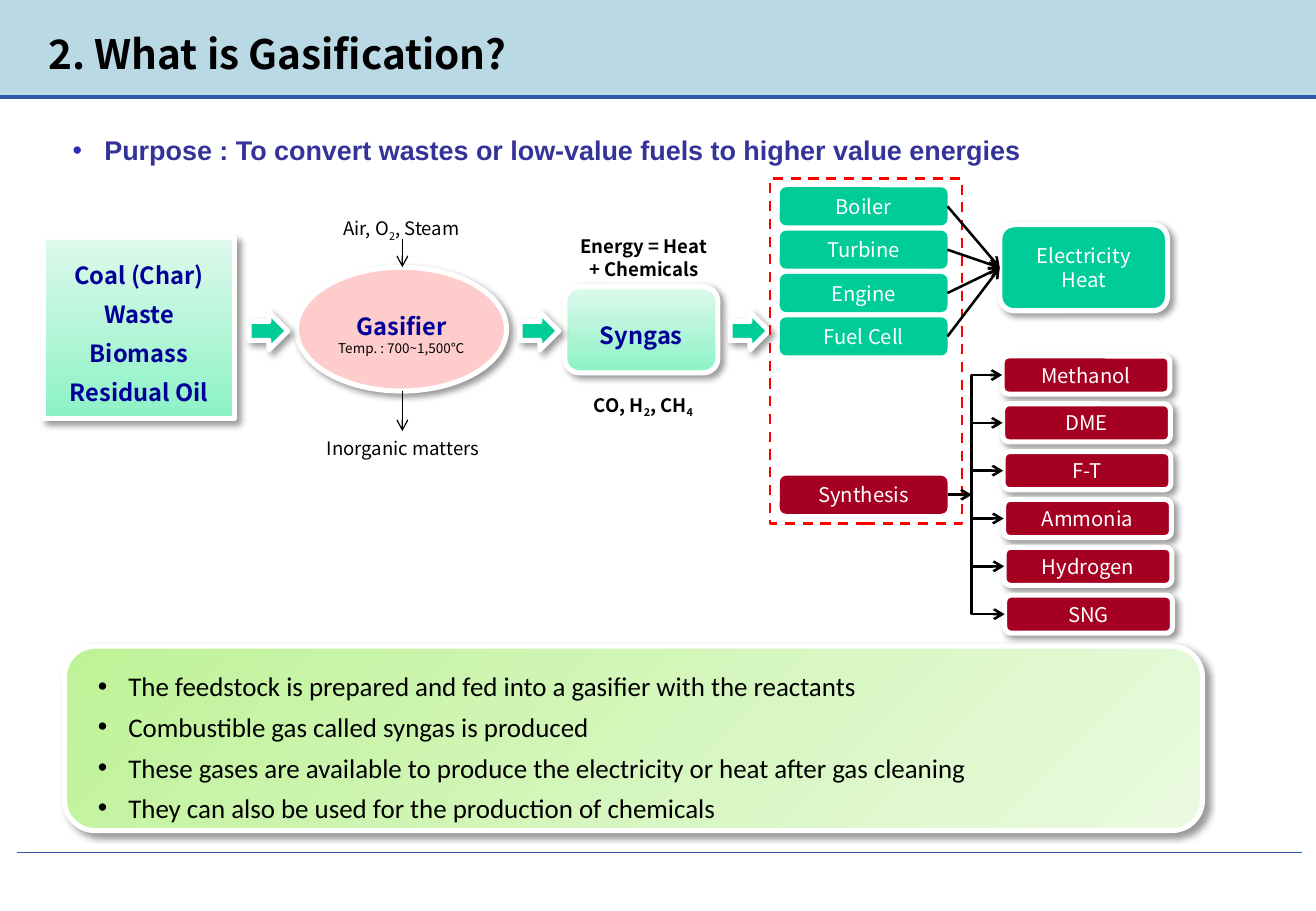
from lxml.etree import SubElement
from pptx import Presentation
from pptx.dml.color import RGBColor
from pptx.enum.dml import MSO_LINE
from pptx.enum.shapes import MSO_CONNECTOR as CONN, MSO_SHAPE as SHAPE
from pptx.enum.text import MSO_ANCHOR as ANCHOR, PP_ALIGN as ALIGN
from pptx.oxml.ns import qn
from pptx.util import Pt

NOTO = "Noto Sans CJK KR"
GREEN, RED, NAVY, WHITE, BLACK, BLUE = "00CC99", "A50021", "000099", "FFFFFF", "000000", "2C5AA7"
MINT = ("8CF2C6", "DEF9EC", 90)
LIME = ("BEF297", "EAFAE0", 315)

# Text formats
TITLE = dict(name=NOTO, size=Pt(24), bold=True, color=BLACK)
STAGE = dict(name=NOTO, size=Pt(14), bold=True, color=NAVY)
DETAIL = dict(name=NOTO, size=Pt(8), color=BLACK)
BOX = dict(name=NOTO, size=Pt(12), color=WHITE)
LABEL = dict(name=NOTO, size=Pt(11), color=BLACK)
STRONG = dict(LABEL, bold=True)
PURPOSE = dict(name="Arial", size=Pt(16), bold=True, color="333399")
NOTE = dict(name="Calibri", size=Pt(16), color=BLACK)


def rgb(code):
    return RGBColor.from_string(code)


def pts(*values):
    return [Pt(v) for v in values]


def write(sp, lines, fmt, align=ALIGN.CENTER, spacing=None, bullet=None, indent=18,
          inset=None, anchor=ANCHOR.TOP, wrap=True):
    """Fill a shape with paragraphs; text between bars is subscript."""
    tf = sp.text_frame
    tf.word_wrap, tf.vertical_anchor = wrap, anchor
    if inset:
        tf.margin_left, tf.margin_top, tf.margin_right, tf.margin_bottom = pts(*inset)
    for i, line in enumerate(lines):
        p = tf.paragraphs[0] if i == 0 else tf.add_paragraph()
        add_paragraph_text(p, line, fmt, align, spacing)
        if bullet:
            pPr = p._p.get_or_add_pPr()
            pPr.set("marL", str(Pt(indent)))
            pPr.set("indent", str(-Pt(indent)))
            SubElement(SubElement(pPr, qn("a:buClr")), qn("a:srgbClr"), val=bullet)
            SubElement(pPr, qn("a:buFont"), typeface="Arial")
            SubElement(pPr, qn("a:buChar"), char="•")


def add_paragraph_text(p, line, fmt, align=ALIGN.CENTER, spacing=None):
    p.alignment, p.line_spacing = align, spacing
    for i, part in enumerate(line.split("|")):
        r = p.add_run()
        r.text = part
        for key, value in fmt.items():
            if key == "color":
                r.font.color.rgb = rgb(value)
            else:
                setattr(r.font, key, value)
        rPr = r._r.get_or_add_rPr()
        SubElement(rPr, qn("a:ea"), typeface=fmt["name"])
        if i % 2:
            rPr.set("baseline", "-25000")


def add_text(s, box, lines, fmt, **options):
    write(s.shapes.add_textbox(*pts(*box)), lines, fmt, **options)


def add_box(s, kind, box, fill=None, raised=False):
    """Shape with a flat, gradient or no fill; raised adds white edge and shadow."""
    sp = s.shapes.add_shape(kind, *pts(*box))
    sp.shadow.inherit = False
    if isinstance(fill, tuple):
        sp.fill.gradient()
        sp.fill.gradient_angle = fill[2]
        for stop, code in zip(sp.fill.gradient_stops, fill):
            stop.color.rgb = rgb(code)
    elif fill:
        sp.fill.solid()
        sp.fill.fore_color.rgb = rgb(fill)
    else:
        sp.fill.background()
    if raised:
        sp.line.color.rgb, sp.line.width = rgb(WHITE), Pt(3)
        effects = sp._element.spPr.find(qn("a:effectLst"))
        shadow = SubElement(effects, qn("a:outerShdw"), blurRad=str(Pt(4)), dist=str(Pt(3)),
                            dir="2700000", algn="tl", rotWithShape="0")
        color = SubElement(shadow, qn("a:srgbClr"), val=BLACK)
        SubElement(color, qn("a:alpha"), val="40000")
    else:
        sp.line.fill.background()
    return sp


def add_label_box(s, box, lines, fill, fmt=BOX, raised=False, spacing=None):
    sp = add_box(s, SHAPE.ROUNDED_RECTANGLE, box, fill, raised)
    write(sp, lines, fmt, spacing=spacing, inset=(0, 0, 0, 0), anchor=ANCHOR.MIDDLE)
    return sp


def add_line(s, ends, color=BLACK, width=1.5, heads=("tailEnd",), begin=None, end=None,
             kind=CONN.STRAIGHT):
    """Connector; begin and end are optional (shape, side) joins."""
    cx = s.shapes.add_connector(kind, *pts(*ends))
    if begin:
        cx.begin_connect(*begin)
    if end:
        cx.end_connect(*end)
    cx.line.color.rgb, cx.line.width = rgb(color), Pt(width)
    ln = cx.line._get_or_add_ln()
    for head in heads:
        SubElement(ln, qn("a:" + head), type="arrow")
    SubElement(cx._element.spPr, qn("a:effectLst"))
    return cx


def add_frame(s):
    band = add_box(s, SHAPE.RECTANGLE, (0, 0, 780, 57), "52A4BE")
    color = band._element.spPr.find(qn("a:solidFill"))[0]
    SubElement(color, qn("a:alpha"), val="40000")
    add_line(s, (10, 505.5, 772, 505.5), BLUE, 0.75, ())
    add_line(s, (0, 57.6, 780, 57.6), BLUE, 2.25, ())
    add_text(s, (21.6, 13.7, 564, 36), ["2. What is Gasification?"], TITLE, align=ALIGN.LEFT)
    add_text(s, (36, 66.2, 699, 34),
             ["Purpose : To convert wastes or low-value fuels to higher value energies"], PURPOSE,
             align=ALIGN.LEFT, spacing=1.5, bullet="2D2DB9", indent=18.8, inset=(7.2, 3.6, 0, 3.6))


def add_process(s):
    # Feedstock, gasifier and syngas
    feed = add_box(s, SHAPE.RECTANGLE, (26, 141, 113, 107.3), MINT, True)
    write(feed, ["Coal (Char)", "Waste", "Biomass", "Residual Oil"], STAGE, spacing=Pt(23),
          anchor=ANCHOR.MIDDLE)
    gasifier = add_box(s, SHAPE.OVAL, (175.7, 158.4, 124.6, 73.4), "FFCCCC", True)
    write(gasifier, ["Gasifier"], STAGE, spacing=Pt(23), inset=(0, 0, 0, 0), anchor=ANCHOR.MIDDLE)
    add_paragraph_text(gasifier.text_frame.add_paragraph(), "Temp. : 700~1,500℃", DETAIL)
    add_label_box(s, (334.8, 170, 90.7, 51), ["Syngas"], MINT, STAGE, True, Pt(23))

    for left in (147.6, 308.2, 432.7):
        add_box(s, SHAPE.RIGHT_ARROW, (left, 185, 23, 22.4), GREEN, True)

    # Labels and the gasifier's inlet and outlet
    for box, lines, fmt in (
            ((190, 125.3, 96, 20), ["Air, O|2|, Steam"], LABEL),
            ((181.4, 255.6, 115, 21), ["Inorganic matters"], LABEL),
            ((341.3, 229.7, 80, 21), ["CO, H|2|, CH|4|"[:-1]], STRONG),
            ((333.4, 136, 96.5, 34), ["Energy = Heat", "+ Chemicals"], STRONG)):
        add_text(s, box, lines, fmt, wrap=False)
    for top, bottom in ((141.8, 158.4), (231.8, 255.6)):
        add_line(s, (238.5, top, 238.5, bottom), width=0.75)


def add_uses(s):
    area = add_box(s, SHAPE.RECTANGLE, (456.5, 105.8, 113.7, 204.5))
    area.line.color.rgb, area.line.width = rgb("FF0000"), Pt(1.5)
    area.line.dash_style = MSO_LINE.DASH

    # Power and heat
    power = add_label_box(s, (592.6, 133.2, 99.4, 51), ["Electricity", "Heat"], GREEN, raised=True)
    for i, name in enumerate(("Boiler", "Turbine", "Engine", "Fuel Cell")):
        device = add_label_box(s, (462.2, 111 + 25.7 * i, 99.4, 22.6), [name], GREEN)
        add_line(s, (0, 0, 0, 0), begin=(device, 3), end=(power, 1))

    # Chemicals
    trunk = 576
    synthesis = add_label_box(s, (462.2, 282, 99.4, 22.6), [name_synthesis := "Synthesis"], RED)
    add_line(s, (561.6, 293.3, trunk, 293.3), begin=(synthesis, 3))
    names = ("Methanol", "DME", "F-T", "Ammonia", "Hydrogen", "SNG")
    products = [add_label_box(s, (594 + 0.3 * i, 211 + 28.35 * i, 99.4, 22.6), [name], RED,
                              raised=True) for i, name in enumerate(names)]
    for i, product in enumerate(products[1:-1], 1):
        y = 222.3 + 28.35 * i
        add_line(s, (trunk, y, 594, y), end=(product, 1))
    bracket = add_line(s, (0, 0, 0, 0), heads=("headEnd", "tailEnd"), kind=CONN.ELBOW,
                       begin=(products[0], 1), end=(products[-1], 1))
    guides = bracket._element.spPr.find(qn("a:prstGeom")).find(qn("a:avLst"))
    bend = round((Pt(trunk) - bracket.begin_x) / bracket.width * 100000)
    SubElement(guides, qn("a:gd"), name="adj1", fmla=f"val {bend}")


def add_summary(s):
    add_box(s, SHAPE.ROUNDED_RECTANGLE, (38.2, 383, 674.6, 109.4), LIME, True)
    add_text(s, (51, 388.8, 595.5, 98), [
        "The feedstock is prepared and fed into a gasifier with the reactants",
        "Combustible gas called syngas is produced",
        "These gases are available to produce the electricity or heat after gas cleaning",
        "They can also be used for the production of chemicals",
    ], NOTE, align=ALIGN.LEFT, spacing=Pt(24), bullet=BLACK, inset=(7.2, 3.6, 0, 3.6))


def main():
    prs = Presentation()
    prs.slide_width, prs.slide_height = pts(780, 540)
    s = prs.slides.add_slide(prs.slide_layouts[6])
    for add_part in (add_frame, add_process, add_uses, add_summary):
        add_part(s)
    prs.save("out.pptx")


if __name__ == "__main__":
    main()
